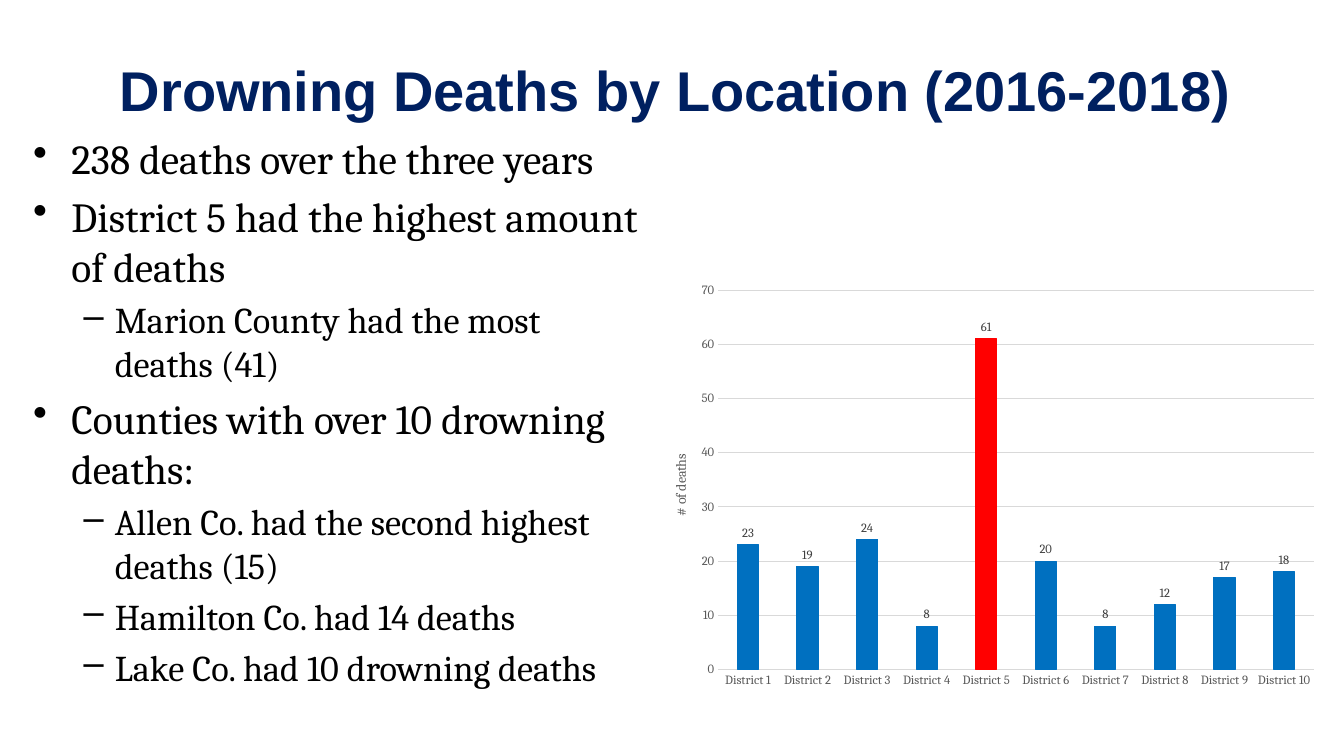
from lxml import etree
from pptx import Presentation
from pptx.chart.data import CategoryChartData
from pptx.dml.color import RGBColor
from pptx.enum.chart import XL_CHART_TYPE, XL_LABEL_POSITION, XL_TICK_MARK
from pptx.enum.text import MSO_ANCHOR, PP_ALIGN
from pptx.oxml.ns import qn
from pptx.util import Inches, Pt

# Bullet level: character, text size, left margin, hanging indent
LEVELS = [("•", 29.6, 0.38, 0.38), ("–", 25.9, 0.81, 0.31)]
FINDINGS = [
    (0, "238 deaths over the three years"),
    (0, "District 5 had the highest amount of deaths"),
    (1, "Marion County had the most deaths (41)"),
    (0, "Counties with over 10 drowning deaths:"),
    (1, "Allen Co. had the second highest deaths (15)"),
    (1, "Hamilton Co. had 14 deaths"),
    (1, "Lake Co. had 10 drowning deaths"),
]
DEATHS = [23, 19, 24, 8, 61, 20, 8, 12, 17, 18]


def rgb(color):
    return RGBColor.from_string(color)


def set_font(font, name, size, color, bold=False):
    font.name, font.size, font.bold = name, Pt(size), bold
    font.color.rgb = rgb(color)


def set_line(line, color):
    line.color.rgb = rgb(color)
    line.width = Pt(0.75)


def add_text(s, left, top, width, height):
    tf = s.shapes.add_textbox(Inches(left), Inches(top),
                              Inches(width), Inches(height)).text_frame
    tf.word_wrap = True
    return tf


def add_title(s, text):
    tf = add_text(s, 0.23, 0.37, 12.93, 1.02)
    tf.vertical_anchor = MSO_ANCHOR.MIDDLE
    p = tf.paragraphs[0]
    p.text = text
    p.alignment = PP_ALIGN.CENTER
    set_font(p.font, "Arial", 40, "002060", True)


def add_bullets(s, items):
    tf = add_text(s, 0.23, 1.27, 6.21, 5.86)
    for i, (level, text) in enumerate(items):
        char, size, margin, hang = LEVELS[level]
        p = tf.add_paragraph() if i else tf.paragraphs[0]
        p.text = text
        p.level = level
        p.space_before = Pt(round(size * 0.2, 1))
        set_font(p.font, "Cambria", size, "000000")
        pPr = p._p.get_or_add_pPr()
        pPr.set("marL", str(Inches(margin)))
        pPr.set("indent", str(-Inches(hang)))
        bullet = etree.Element(qn("a:buChar"), char=char)
        pPr.find(qn("a:defRPr")).addprevious(bullet)


def place(element, **fractions):
    """Fix a chart part at fractions of the chart's size."""
    layout = element.find(qn("c:layout"))
    if layout is None:
        layout = etree.Element(qn("c:layout"))
        element.insert(0, layout)
    manual = etree.SubElement(layout, qn("c:manualLayout"))
    if "w" in fractions:
        etree.SubElement(manual, qn("c:layoutTarget"), val="inner")
    for key in "xy":
        etree.SubElement(manual, qn(f"c:{key}Mode"), val="edge")
    for key, value in fractions.items():
        etree.SubElement(manual, qn(f"c:{key}"), val=str(value))


def style_axis(axis):
    axis.major_tick_mark = axis.minor_tick_mark = XL_TICK_MARK.NONE
    set_font(axis.tick_labels.font, "Cambria", 9, "595959")


def add_deaths_chart(s):
    data = CategoryChartData()
    data.categories = [f"District {n}" for n in range(1, len(DEATHS) + 1)]
    data.add_series("Series 1", DEATHS)
    chart = s.shapes.add_chart(XL_CHART_TYPE.COLUMN_CLUSTERED, Inches(6.4),
                               Inches(2.72), Inches(6.76), Inches(4.19),
                               data).chart
    chart.has_legend = chart.has_title = False
    set_font(chart.font, "Cambria", 10, "000000")
    place(chart._chartSpace.chart.plotArea, x=0.107, y=0.038, w=0.874, h=0.898)

    # Axes
    cat, val = chart.category_axis, chart.value_axis
    style_axis(cat)
    style_axis(val)
    set_line(cat.format.line, "D9D9D9")
    val.format.line.fill.background()
    set_line(val.major_gridlines.format.line, "D9D9D9")
    val.minimum_scale, val.maximum_scale, val.major_unit = 0, 70, 10
    p = val.axis_title.text_frame.paragraphs[0]
    p.text = "# of deaths"
    set_font(p.font, "Cambria", 10, "595959")
    place(val.axis_title._element, x=0.035, y=0.42)

    # Columns, with the highest district in red
    plot = chart.plots[0]
    plot.gap_width = 182
    plot.vary_by_categories = False
    series = plot.series[0]
    highest = series.points[DEATHS.index(max(DEATHS))]
    for part, color in ((series, "0070C0"), (highest, "FF0000")):
        part.format.fill.solid()
        part.format.fill.fore_color.rgb = rgb(color)
        set_line(part.format.line, color)
    labels = series.data_labels
    labels.show_value = True
    labels.position = XL_LABEL_POSITION.OUTSIDE_END
    set_font(labels.font, "Cambria", 9, "404040")


def main():
    prs = Presentation()
    prs.slide_width, prs.slide_height = Inches(13.33), Inches(7.5)
    s = prs.slides.add_slide(prs.slide_layouts[6])
    add_title(s, "Drowning Deaths by Location (2016-2018)")
    add_bullets(s, FINDINGS)
    add_deaths_chart(s)
    prs.save("out.pptx")


if __name__ == "__main__":
    main()
